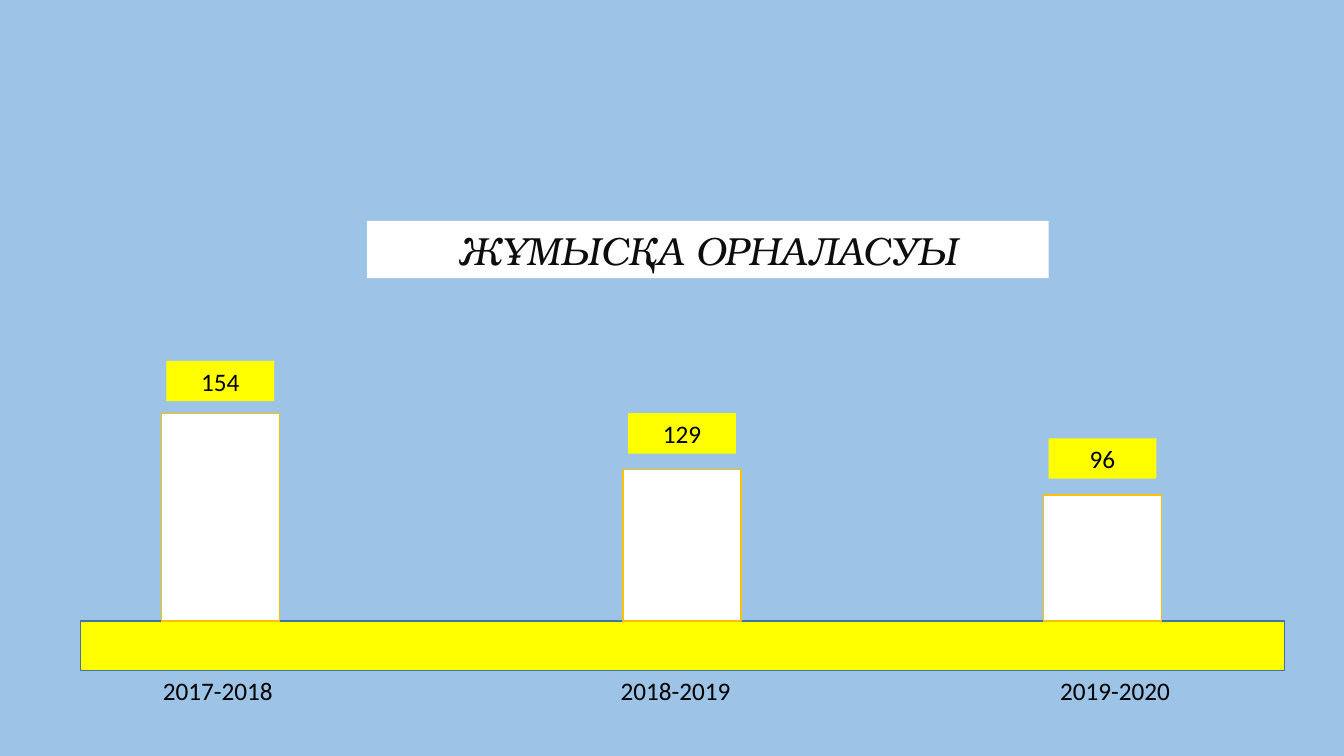
import pptx
import pptx.util
import pptx.dml.color
import pptx.enum.shapes
import pptx.enum.text

Inches = pptx.util.Inches
Pt = pptx.util.Pt

COLORS = {
    "sky": "9DC3E6",
    "white": "FFFFFF",
    "yellow": "FFFF00",
    "gold": "FFC000",
    "navy": "43739E",
    "ink": "0D0D0D",
    "black": "000000",
}
BASE_TOP = 6.16
BAR_W = 1.17
TAG_W, TAG_H = 1.07, 0.4
YEAR_W, YEAR_H = 2.1, 0.4

COLUMNS = [
    ("2017-2018", "154", 1.6, 4.1, 3.58, 2.16),
    ("2018-2019", "129", 6.18, 4.66, 4.1, 6.7),
    ("2019-2020", "96", 10.35, 4.91, 4.35, 11.06),
]


def rgb(name):
    return pptx.dml.color.RGBColor.from_string(COLORS[name])


def add_rect(s, x, y, w, h, fill, line=None):
    sp = s.shapes.add_shape(
        pptx.enum.shapes.MSO_SHAPE.RECTANGLE, Inches(x), Inches(y), Inches(w), Inches(h)
    )
    sp.shadow.inherit = False
    sp.fill.solid()
    sp.fill.fore_color.rgb = rgb(fill)
    if line:
        sp.line.color.rgb = rgb(line)
        sp.line.width = Pt(1)
    else:
        sp.line.fill.background()
    return sp


def write(sp, text, size=18, font="Calibri", color="black", italic=False):
    tf = sp.text_frame
    tf.word_wrap = True
    tf.auto_size = pptx.enum.text.MSO_AUTO_SIZE.NONE
    tf.vertical_anchor = pptx.enum.text.MSO_ANCHOR.MIDDLE
    p = tf.paragraphs[0]
    p.alignment = pptx.enum.text.PP_ALIGN.CENTER
    r = p.add_run()
    r.text = text
    r.font.size = Pt(size)
    r.font.name = font
    r.font.italic = italic
    r.font.color.rgb = rgb(color)


def add_title(s, x, y, w, h):
    sp = s.shapes.title
    sp.left, sp.top, sp.width, sp.height = Inches(x), Inches(y), Inches(w), Inches(h)
    sp.fill.solid()
    sp.fill.fore_color.rgb = rgb("white")
    write(sp, "ЖҰМЫСҚА ОРНАЛАСУЫ", 28, "TeX Gyre Bonum", "ink", True)


def add_column(s, year, value, x, y, tag_y, year_center):
    add_rect(s, x, y, BAR_W, BASE_TOP - y, "white", "gold")
    tag = add_rect(s, x + (BAR_W - TAG_W) / 2, tag_y, TAG_W, TAG_H, "yellow")
    write(tag, value)
    label = s.shapes.add_textbox(
        Inches(year_center - YEAR_W / 2), Inches(6.65), Inches(YEAR_W), Inches(YEAR_H)
    )
    write(label, year)


def add_bars(s, x, w):
    add_rect(s, x, BASE_TOP, w, 0.49, "yellow", "navy")
    for column in COLUMNS:
        add_column(s, *column)


def main():
    prs = pptx.Presentation()
    prs.slide_width = Inches(13.33)
    prs.slide_height = Inches(7.5)
    s = prs.slides.add_slide(prs.slide_layouts[5])
    s.background.fill.solid()
    s.background.fill.fore_color.rgb = rgb("sky")
    add_title(s, 3.64, 2.19, 6.76, 0.57)
    add_bars(s, 0.8, 11.94)
    prs.save("out.pptx")


if __name__ == "__main__":
    main()
